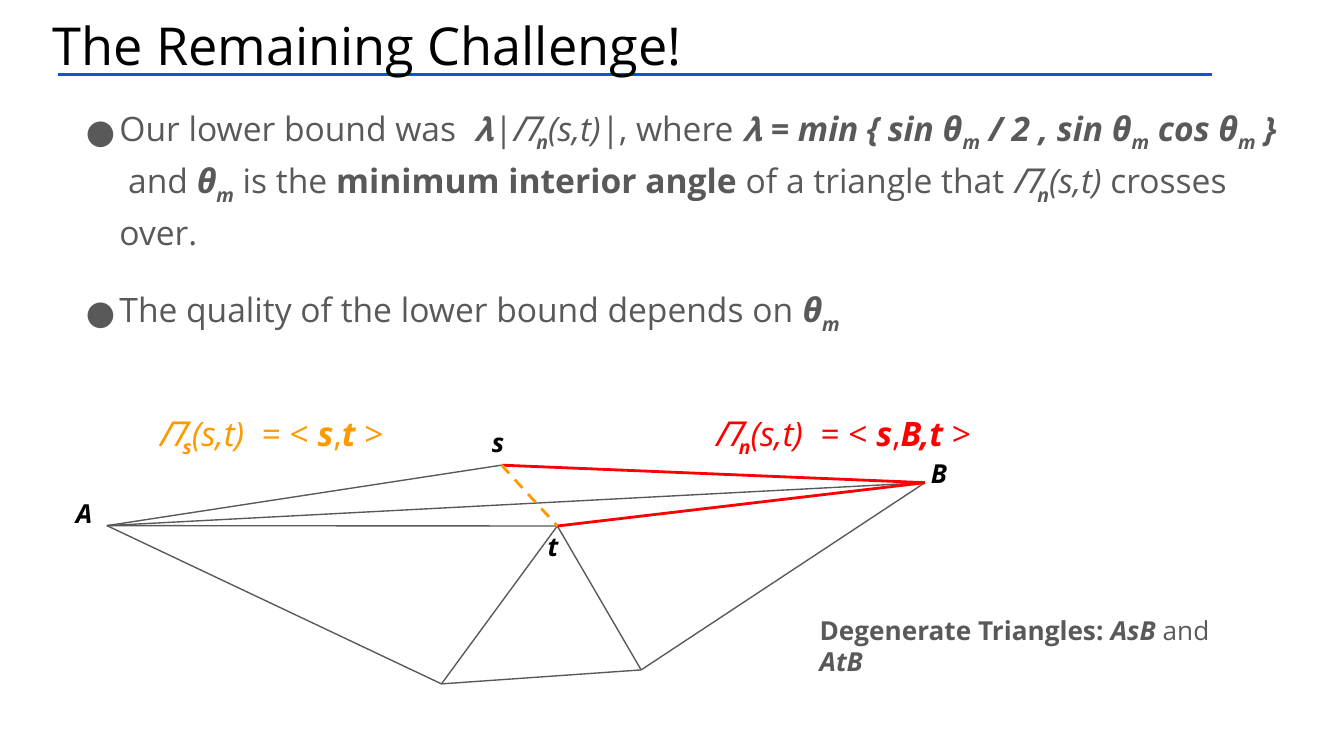
from dataclasses import dataclass

from lxml import etree
from pptx import Presentation
from pptx import util as u
from pptx.dml.color import RGBColor
from pptx.enum import dml, shapes, text
from pptx.oxml.ns import qn


@dataclass(frozen=True)
class Theme:
    font: str = "Open Sans"
    ink: str = "000000"
    gray: str = "595959"
    blue: str = "1155CC"
    red: str = "FF0000"
    gold: str = "FF9900"
    head: int = 28
    body: int = 18
    note: int = 14
    thin: float = 0.75
    bold: float = 1.5


class Deck:
    def __init__(self, theme):
        self.theme = theme
        self.file = Presentation()
        self.file.slide_width, self.file.slide_height = u.Pt(720), u.Pt(405)
        self.slide = self.file.slides.add_slide(self.file.slide_layouts[5])

    def font(self, run, size, color, marks=""):
        """Marks: b bold, i italic, s subscript."""
        font = run.font
        font.name, font.size = self.theme.font, u.Pt(size)
        font.color.rgb = RGBColor.from_string(color)
        font.bold, font.italic = "b" in marks, "i" in marks
        if "s" in marks:
            run._r.get_or_add_rPr().set("baseline", "-25000")

    def frame(self, shape):
        frame = shape.text_frame
        frame.word_wrap = True
        frame.auto_size = text.MSO_AUTO_SIZE.NONE
        frame.vertical_anchor = text.MSO_ANCHOR.TOP
        frame.margin_left = frame.margin_right = u.Pt(7.2)
        frame.margin_top = frame.margin_bottom = u.Pt(7.2)
        return frame

    def title(self, words, left, top, width, height):
        shape = self.slide.shapes.title
        shape.left, shape.top = u.Pt(left), u.Pt(top)
        shape.width, shape.height = u.Pt(width), u.Pt(height)
        para = self.frame(shape).paragraphs[0]
        para.text = words
        para.alignment = text.PP_ALIGN.LEFT
        self.font(para.runs[0], self.theme.head, self.theme.ink)
        return shape

    def box(self, paras, left, top, width, height, size, color,
            space=None, after=0, align=text.PP_ALIGN.LEFT, bullet=False):
        """Each paragraph is a list of (words, marks) pairs."""
        shape = self.slide.shapes.add_textbox(*map(u.Pt, (left, top, width, height)))
        frame = self.frame(shape)
        for n, parts in enumerate(paras):
            para = frame.add_paragraph() if n else frame.paragraphs[0]
            para.alignment, para.space_after = align, u.Pt(after)
            if space:
                para.line_spacing = space
            if bullet:
                self.bullet(para, color)
            for words, marks in parts:
                run = para.add_run()
                run.text = words
                self.font(run, size, color, marks)

    def bullet(self, para, color):
        props = para._p.get_or_add_pPr()
        props.set("marL", str(u.Pt(36)))
        props.set("indent", str(u.Pt(-18)))
        tint = etree.SubElement(props, qn("a:buClr"))
        etree.SubElement(tint, qn("a:srgbClr"), val=color)
        etree.SubElement(props, qn("a:buFont"), typeface=self.theme.font)
        etree.SubElement(props, qn("a:buChar"), char="●")

    def line(self, start, end, color, width, dash=False):
        line = self.slide.shapes.add_connector(
            shapes.MSO_CONNECTOR.STRAIGHT, *map(u.Pt, (*start, *end)))
        line.line.color.rgb = RGBColor.from_string(color)
        line.line.width = u.Pt(width)
        if dash:
            line.line.dash_style = dml.MSO_LINE.DASH
        etree.SubElement(line._element.spPr, qn("a:effectLst"))
        return line

    def label(self, name, x, y):
        """Centre a vertex name on x, y."""
        side, high = 31, 32.4
        self.box([[(name, "bi")]], x - side / 2, y - high / 2, side, high,
                 self.theme.note, self.theme.ink, align=text.PP_ALIGN.CENTER)


def curve(sub):
    return [("𝛱", "bi"), (sub, "bis"), ("(s,t)", "i")]


def route(sub, stops):
    return curve(sub) + [("  ", "i"), ("= < ", ""), ("s", "bi"), (",", ""),
                         (stops + " ", "bi"), (">", "")]


def main():
    look = Theme()
    deck = Deck(look)
    angle = [("θ", "bi"), ("m", "bis")]

    title = deck.title("The Remaining Challenge!", 20.9, 0, 671, 45.4)
    rule = deck.line((31, 40.1), (649.5, 40.1), look.blue, look.bold)
    title._element.addprevious(rule._element)

    bound = [("Our lower bound was  ", ""), ("𝛌", "bi"), ("|", "i"),
             *curve("n"), ("|", "i"), (", where ", ""),
             ("𝛌 = min { sin ", "bi"), *angle, (" / 2 , sin ", "bi"), *angle,
             (" cos ", "bi"), *angle, (" }", "bi"), ("  and ", ""), *angle,
             (" is the ", ""), ("minimum interior angle", "b"),
             (" of a triangle that ", ""), *curve("n"), (" crosses over.", "")]
    quality = [("The quality of the lower bound depends on ", ""), *angle]
    deck.box([bound, quality], 20.9, 46.8, 671, 335.5, look.body, look.gray,
             space=1.15, after=16, bullet=True)

    a, s, b, t = (57.3, 281.6), (268.7, 249.2), (495.5, 258.6), (298.6, 281.8)
    low, right = (236.5, 366.4), (343.5, 358.9)
    for start, end in [(a, s), (a, b), (a, t), (a, low), (right, b),
                       (low, right), (low, t), (t, right)]:
        deck.line(start, end, look.gray, look.thin)
    for start in (s, t):
        deck.line(start, b, look.red, look.bold)
    deck.line(s, t, look.gold, look.bold, dash=True)

    for name, x, y in [("A", 45, 275.4), ("B", 503, 253.8),
                       ("s", 266.8, 237.2), ("t", 296.3, 293.4)]:
        deck.label(name, x, y)

    deck.box([[("Degenerate Triangles: ", "b"), ("AsB", "bi"), (" and ", ""),
               ("AtB", "bi")]], 432, 321.8, 249, 32.4, look.note, look.gray,
             after=16)
    for parts, left, width, color in [
            (route("s", "t"), 77.8, 152, look.gold),
            (route("n", "B,t"), 375.8, 170.6, look.red)]:
        deck.box([parts], left, 210.2, width, 32.4, look.body, color,
                 space=1.15, after=16)

    deck.file.save("out.pptx")


if __name__ == "__main__":
    main()
